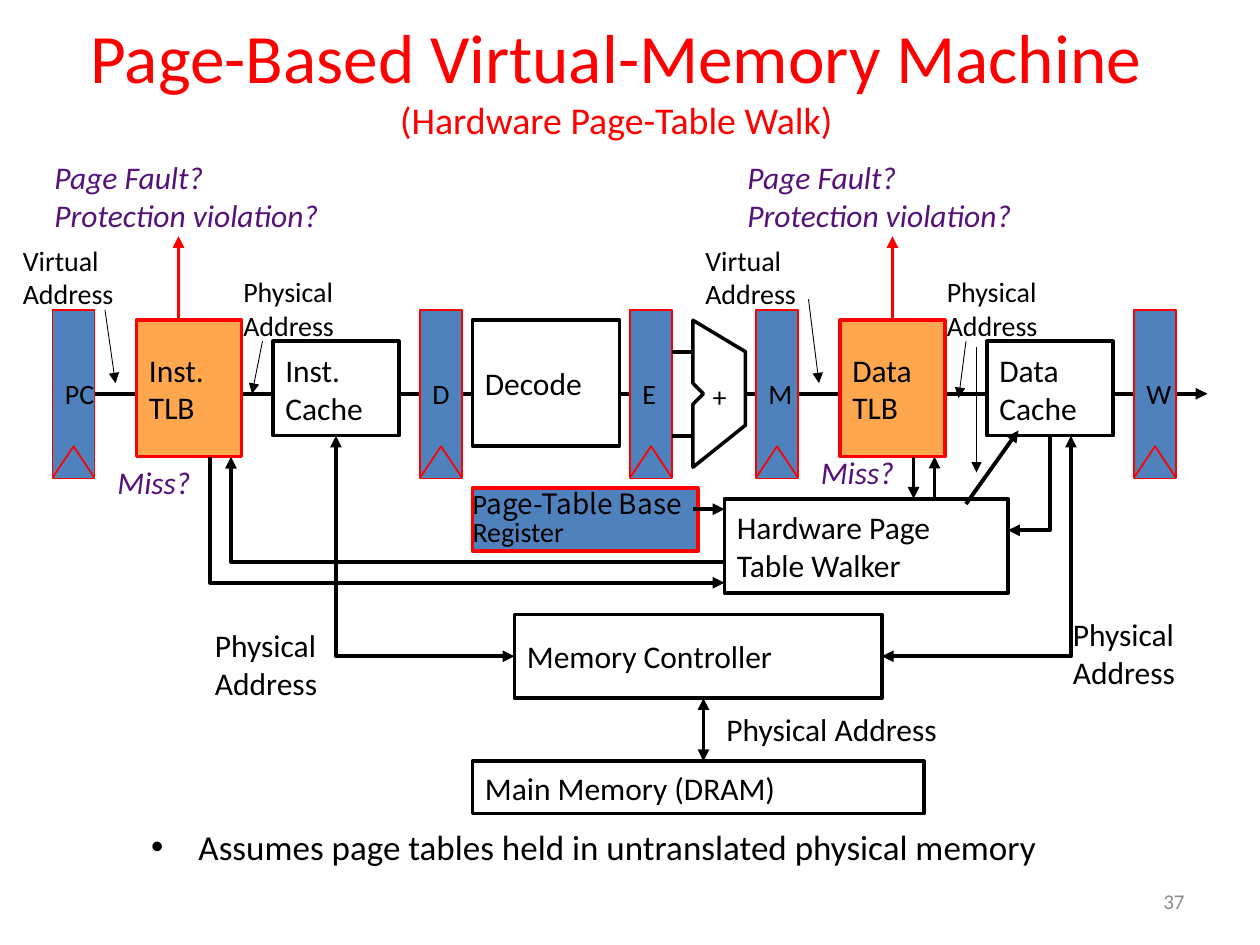
from pptx import Presentation
from pptx.dml.color import RGBColor
from pptx.enum.shapes import MSO_CONNECTOR as Link, MSO_SHAPE as Preset
from pptx.enum.text import MSO_ANCHOR as Anchor, MSO_AUTO_SIZE as AutoSize, PP_ALIGN as Align
from pptx.oxml.ns import qn
from pptx.util import Pt
from lxml.etree import SubElement

BLACK = RGBColor(0x00, 0x00, 0x00)
WHITE = RGBColor(0xFF, 0xFF, 0xFF)
RED = RGBColor(0xFF, 0x00, 0x00)
BLUE = RGBColor(0x4F, 0x81, 0xBD)
ORANGE = RGBColor(0xFF, 0xA7, 0x4F)
PURPLE = RGBColor(0x56, 0x12, 0x7A)
GRAY = RGBColor(0x8C, 0x8C, 0x8C)
PX = 7620


class Diagram:
    """Draws pipeline elements on one page in a shared style."""

    font = "Calibri"

    def __init__(self, page):
        self.page = page
        self.shapes = page.shapes

    def place(self, shape, area):
        shape.left, shape.top, shape.width, shape.height = [n * PX for n in area]

    def style(self, para, size, color, align=Align.LEFT, italic=None):
        para.alignment = align
        para.font.name = self.font
        para.font.size = Pt(size)
        para.font.color.rgb = color
        para.font.italic = italic

    def set_text(self, frame, text, size, color=BLACK, align=Align.LEFT, italic=None, wrap=True):
        frame.word_wrap = wrap
        frame.vertical_anchor = Anchor.MIDDLE
        frame.text = text
        for para in frame.paragraphs:
            self.style(para, size, color, align, italic)

    def outline(self, shape, fill, line, width):
        shape.shadow.inherit = False
        if fill is None:
            shape.fill.background()
        else:
            shape.fill.solid()
            shape.fill.fore_color.rgb = fill
        shape.line.color.rgb = line
        shape.line.width = Pt(width)

    def title(self, heading, subtitle, area):
        holder = self.shapes.title
        self.place(holder, area)
        frame = holder.text_frame
        frame.auto_size = AutoSize.NONE
        self.set_text(frame, "", 39.6, RED, Align.CENTER)
        para = frame.paragraphs[0]
        para.add_run().text = heading
        para.add_line_break()
        span = para.add_run()
        span.text = subtitle
        span.font.size = Pt(21.6)

    def bullet(self, text, area):
        holder = self.page.placeholders[1]
        self.place(holder, area)
        frame = holder.text_frame
        frame.auto_size = AutoSize.NONE
        frame.text = text
        self.style(frame.paragraphs[0], 20, BLACK)

    def label(self, text, area, size=18, **look):
        box = self.shapes.add_textbox(*[n * PX for n in area])
        self.set_text(box.text_frame, text, size, **look)

    def box(self, text, area, fill=WHITE, line=BLACK, width=2, size=18, wrap=True):
        shape = self.shapes.add_shape(Preset.RECTANGLE, *[n * PX for n in area])
        self.outline(shape, fill, line, width)
        self.set_text(shape.text_frame, text, size, wrap=wrap)
        return shape

    def polygon(self, points, fill=None, line=BLACK, width=2, close=False):
        builder = self.shapes.build_freeform(*points[0], scale=PX)
        builder.add_line_segments(points[1:], close=close)
        shape = builder.convert_to_shape()
        self.outline(shape, fill, line, width)
        return shape

    def register(self, name, left):
        self.box(name, (left, 295, 40, 160), BLUE, RED, 1, 16, wrap=False)
        self.polygon([(left, 455), (left + 20, 425), (left + 40, 455)], BLUE, RED, 1)

    def base_register(self, spans, area):
        frame = self.box("", area, BLUE, RED, size=16).text_frame
        frame.margin_left = frame.margin_right = frame.margin_top = frame.margin_bottom = 0
        para = frame.paragraphs[0]
        para.line_spacing = 0.85
        for text, font in spans:
            span = para.add_run()
            span.text = text
            span.font.name = font

    def wire(self, *points, color=BLACK, width=2.25, ends=""):
        if len(points) == 2:
            (x1, y1), (x2, y2) = points
            shape = self.shapes.add_connector(Link.STRAIGHT, x1 * PX, y1 * PX, x2 * PX, y2 * PX)
            shape.line.color.rgb = color
            shape.line.width = Pt(width)
            SubElement(shape._element.spPr, qn("a:effectLst"))
        else:
            shape = self.polygon(points, line=color, width=width)
        for end in ends.split():
            SubElement(shape.line._get_or_add_ln(), qn(f"a:{end}End"), type="triangle")


def main():
    deck = Presentation()
    deck.slide_width, deck.slide_height = 1200 * PX, 900 * PX
    diagram = Diagram(deck.slides.add_slide(deck.slide_layouts[1]))

    diagram.title("Page-Based Virtual-Memory Machine", "(Hardware Page-Table Walk)",
                  (20, 20, 1134, 109))
    diagram.bullet("Assumes page tables held in untranslated physical memory",
                   (132, 780, 1008, 53))
    diagram.label("37", (860, 834, 280, 48), 12, color=GRAY, align=Align.RIGHT)

    diagram.wire((710, 375), (1150, 375), ends="tail")
    diagram.wire((90, 375), (630, 375))
    for name, left in (("PC", 50), ("D", 400), ("E", 600), ("M", 720), ("W", 1080)):
        diagram.register(name, left)
    diagram.box("Decode", (450, 305, 140, 120))
    diagram.polygon([(660, 305), (660, 365), (670, 375), (660, 385), (660, 445),
                     (710, 405), (710, 335)], WHITE, close=True)
    diagram.label("+", (667, 355, 46, 44), 16)
    for y in (335, 415):
        diagram.wire((640, y), (660, y))

    for kind, tlb, cache, fault_x, fault, virtual, physical in (
            ("Inst.", 130, 260, 170, 40, 10, 220),
            ("Data", 800, 940, 850, 700, 660, 890)):
        diagram.box(f"{kind} TLB", (tlb, 305, 100, 130), ORANGE, RED)
        diagram.box(f"{kind} Cache", (cache, 325, 120, 90))
        diagram.wire((fault_x, 305), (fault_x, 225), color=RED, ends="tail")
        diagram.label("Page Fault?\nProtection violation?", (fault, 145, 330, 84),
                      color=PURPLE, italic=True)
        diagram.label("Virtual Address", (virtual, 225, 146, 77), 16)
        diagram.label("Physical Address", (physical, 255, 146, 77), 16)
    for left, top in ((100, 435), (770, 425)):
        diagram.label("Miss?", (left, top, 106, 48), color=PURPLE, italic=True)

    diagram.box("Main Memory (DRAM)", (450, 725, 430, 50))
    diagram.box("Memory Controller", (490, 585, 350, 80))
    diagram.box("Hardware Page Table Walker", (690, 475, 270, 90))
    diagram.base_register((("P", "Calibri"), ("age-Table Base", "Noto Sans CJK JP"),
                           (" Register", "Calibri")), (450, 465, 215, 60))
    for area in ((1010, 580, 146, 84), (193, 590, 146, 84), (680, 670, 320, 48)):
        diagram.label("Physical Address", area)

    for points in (((1020, 415), (1020, 625), (840, 625)),
                   ((320, 415), (320, 625), (490, 625)),
                   ((670, 665), (670, 725))):
        diagram.wire(*points, ends="head tail")
    for points in (((660, 485), (690, 485)),
                   ((870, 435), (870, 475)),
                   ((890, 475), (890, 435)),
                   ((1000, 415), (1000, 505), (960, 505)),
                   ((200, 435), (200, 555), (690, 555)),
                   ((690, 535), (220, 535), (220, 435)),
                   ((920, 480), (970, 410))):
        diagram.wire(*points, ends="tail")
    for points in (((250, 325), (240, 375)), ((100, 295), (110, 365)),
                   ((920, 325), (913, 379)), ((770, 285), (780, 365)),
                   ((930, 330), (930, 450))):
        diagram.wire(*points, width=0.5, ends="tail")

    deck.save("out.pptx")


if __name__ == "__main__":
    main()
